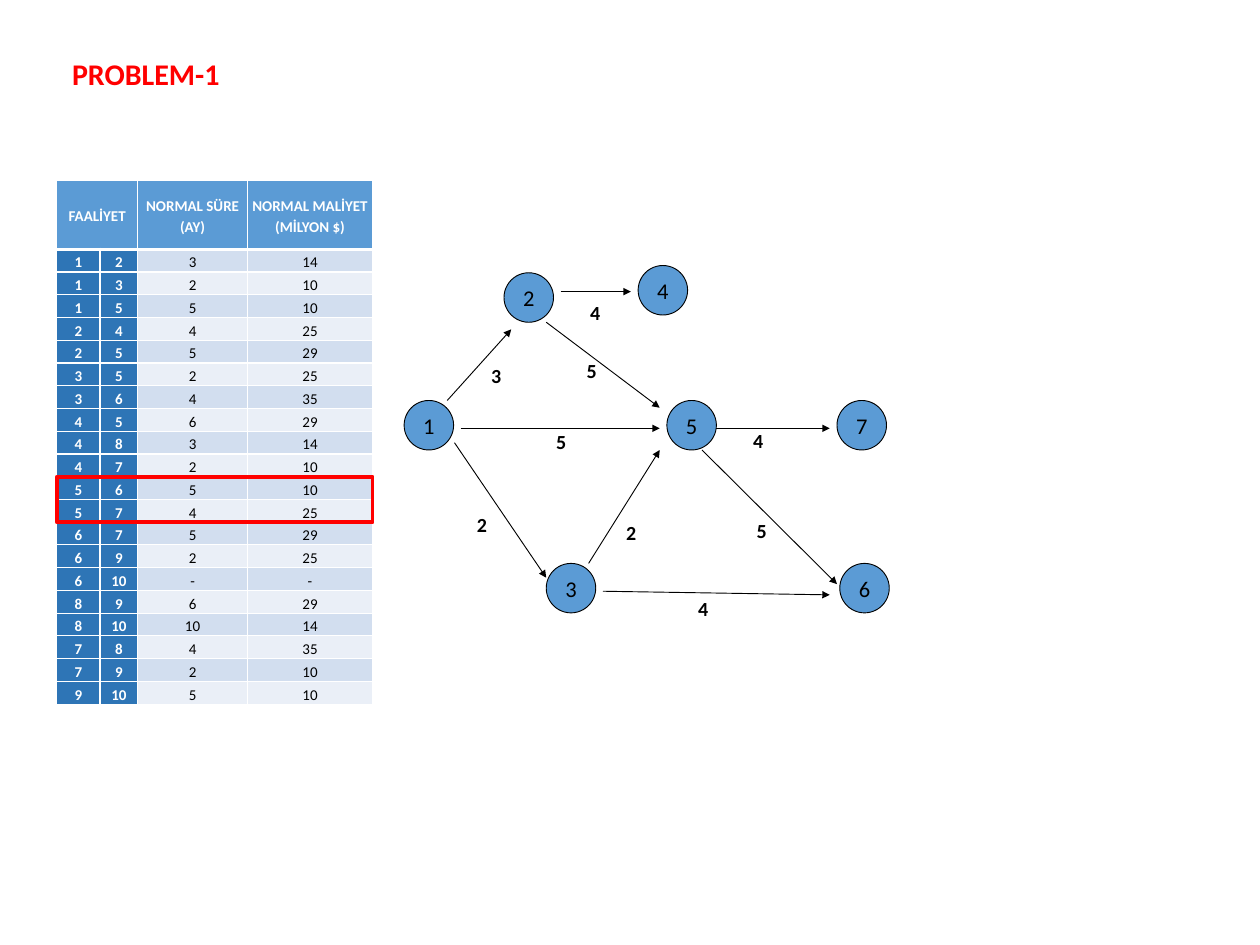
from lxml.etree import SubElement
from pptx import Presentation
from pptx.dml.color import RGBColor
from pptx.enum.shapes import MSO_CONNECTOR, MSO_SHAPE
from pptx.enum.text import MSO_ANCHOR, MSO_AUTO_SIZE, PP_ALIGN
from pptx.oxml.ns import qn
from pptx.util import Pt

RED, BLACK, WHITE = "FF0000", "000000", "FFFFFF"
BLUE, DARK_BLUE, BANDS = "5B9BD5", "2E75B6", ("EAEFF7", "D2DEEF")

HEADERS = {0: ["FAALİYET"], 2: ["NORMAL SÜRE (AY)"], 3: ["NORMAL MALİYET", "(MİLYON $)"]}
ACTIVITIES = [
    (1, 2, 3, 14), (1, 3, 2, 10), (1, 5, 5, 10), (2, 4, 4, 25), (2, 5, 5, 29),
    (3, 5, 2, 25), (3, 6, 4, 35), (4, 5, 6, 29), (4, 8, 3, 14), (4, 7, 2, 10),
    (5, 6, 5, 10), (5, 7, 4, 25), (6, 7, 5, 29), (6, 9, 2, 25), (6, 10, "-", "-"),
    (8, 9, 6, 29), (8, 10, 10, 14), (7, 8, 4, 35), (7, 9, 2, 10), (9, 10, 5, 10),
]
DURATIONS = {(start, end): months for start, end, months, cost in ACTIVITIES}
COLUMN_WIDTHS = (34.6, 30.2, 87.8, 100.1)
HEADER_HEIGHT, ROW_HEIGHT = 54.7, 18.2

NODE_SIZE = 39.6
NODES = {
    1: (3.3, 120.4), 2: (83.2, 18.2), 3: (117, 250.7), 4: (190.5, 12.4),
    5: (213.5, 120.4), 6: (351.8, 250.7), 7: (349.6, 120.4),
}
EDGES = {
    (1, 2): ((37.8, 120.4), (89, 63.5), (65.9, 57.8)),
    (1, 3): ((43.6, 154.2), (117, 262.2), (54.4, 177.3)),
    (1, 5): ((48.6, 142.7), (207.8, 142.7), (117.8, 111)),
    (2, 4): ((128.6, 33.3), (184.7, 33.3), (145.1, 7.4)),
    (2, 5): ((117, 57.8), (207.8, 126.2), (142.2, 54)),
    (3, 5): ((150.9, 250.7), (207.8, 160), (173.9, 183.8)),
    (3, 6): ((162.4, 273), (343.8, 275.9), (231.5, 244.2)),
    (5, 6): ((241.6, 160), (349.6, 267.3), (278.3, 182.3)),
    (5, 7): ((253.1, 142.7), (343.8, 142.7), (275.4, 110.3)),
}


def rgb(value):
    """Turn a hex string into a colour."""
    return RGBColor.from_string(value)


def add_run(p, text, size, color, bold=False):
    """Append a formatted run to a paragraph."""
    r = p.add_run()
    r.text = str(text)
    r.font.name, r.font.size, r.font.bold = "Calibri", Pt(size), bold
    r.font.color.rgb = rgb(color)


def add_title(slide, left, top, width, height):
    """Place and format the slide title."""
    title = slide.shapes.title
    title.left, title.top, title.width, title.height = map(Pt, (left, top, width, height))
    tf = title.text_frame
    tf.auto_size, tf.vertical_anchor = MSO_AUTO_SIZE.NONE, MSO_ANCHOR.TOP
    p = tf.paragraphs[0]
    p.alignment = PP_ALIGN.JUSTIFY
    add_run(p, "PROBLEM-1", 24, RED, True)


def set_borders(cell, row):
    """Draw white cell borders, heavier below the header."""
    heavy = {0: "lnB", 1: "lnT"}.get(row)
    for side in ("lnL", "lnR", "lnT", "lnB"):
        width = Pt(3 if side == heavy else 1)
        ln = SubElement(cell._tc.get_or_add_tcPr(), qn(f"a:{side}"), w=str(width))
        SubElement(SubElement(ln, qn("a:solidFill")), qn("a:srgbClr"), val=WHITE)


def fill_cell(cell, row, lines, fill, color, bold):
    """Format one table cell and write its lines."""
    set_borders(cell, row)
    cell.fill.solid()
    cell.fill.fore_color.rgb = rgb(fill)
    cell.margin_left = cell.margin_right = Pt(3.5)
    cell.margin_top = cell.margin_bottom = 0
    cell.vertical_anchor = MSO_ANCHOR.BOTTOM if row else MSO_ANCHOR.MIDDLE
    p = cell.text_frame.paragraphs[0]
    p.alignment, p.line_spacing = PP_ALIGN.CENTER, 1.15
    for i, line in enumerate(lines):
        if i:
            p.add_line_break()
        add_run(p, line, 12, color, bold)


def add_activity_table(slide, left, top):
    """Build the activity table and frame the activities leaving node 5."""
    width = sum(COLUMN_WIDTHS)
    height = HEADER_HEIGHT + ROW_HEIGHT * len(ACTIVITIES)
    table = slide.shapes.add_table(len(ACTIVITIES) + 1, len(COLUMN_WIDTHS),
                                   Pt(left), Pt(top), Pt(width), Pt(height)).table
    for column, column_width in zip(table.columns, COLUMN_WIDTHS):
        column.width = Pt(column_width)
    for i, row in enumerate(table.rows):
        row.height = Pt(ROW_HEIGHT if i else HEADER_HEIGHT)
    table.cell(0, 0).merge(table.cell(0, 1))
    for column, lines in HEADERS.items():
        fill_cell(table.cell(0, column), 0, lines, BLUE, WHITE, True)
    for row, activity in enumerate(ACTIVITIES, 1):
        for column, value in enumerate(activity):
            style = (DARK_BLUE, WHITE, True) if column < 2 else (BANDS[row % 2], BLACK, False)
            fill_cell(table.cell(row, column), row, [value], *style)

    framed = [i for i, activity in enumerate(ACTIVITIES) if activity[0] == 5]
    frame = slide.shapes.add_shape(
        MSO_SHAPE.RECTANGLE, Pt(left), Pt(top + HEADER_HEIGHT + framed[0] * ROW_HEIGHT),
        Pt(width), Pt(len(framed) * ROW_HEIGHT))
    frame.shadow.inherit = False
    frame.fill.background()
    frame.line.color.rgb, frame.line.width = rgb(RED), Pt(3)


def add_node(slide, left, top, number):
    """Draw a numbered network node."""
    sp = slide.shapes.add_shape(MSO_SHAPE.OVAL, Pt(left), Pt(top), Pt(NODE_SIZE), Pt(NODE_SIZE))
    sp.shadow.inherit = False
    sp.fill.solid()
    sp.fill.fore_color.rgb = rgb(BLUE)
    sp.line.color.rgb, sp.line.width = rgb(BLACK), Pt(0.75)
    tf = sp.text_frame
    tf.word_wrap, tf.vertical_anchor = False, MSO_ANCHOR.MIDDLE
    p = tf.paragraphs[0]
    p.alignment = PP_ALIGN.CENTER
    add_run(p, number, 18, BLACK)


def add_arrow(slide, x1, y1, x2, y2):
    """Draw a thin black arrow."""
    line = slide.shapes.add_connector(MSO_CONNECTOR.STRAIGHT, *map(Pt, (x1, y1, x2, y2)))
    line.line.color.rgb, line.line.width = rgb(BLACK), Pt(0.75)
    SubElement(line.line._get_or_add_ln(), qn("a:tailEnd"), type="triangle")
    SubElement(line._element.spPr, qn("a:effectLst"))


def add_duration(slide, left, top, months):
    """Write the duration beside an arrow."""
    tf = slide.shapes.add_textbox(Pt(left), Pt(top), Pt(22.3), Pt(55.4)).text_frame
    tf.word_wrap, tf.vertical_anchor = True, MSO_ANCHOR.BOTTOM
    add_run(tf.paragraphs[0], months, 16, BLACK, True)


def add_network(slide, left, top):
    """Draw the activity network from its top left corner."""
    for number, (x, y) in NODES.items():
        add_node(slide, left + x, top + y, number)
    for activity, ((x1, y1), (x2, y2), (x, y)) in EDGES.items():
        add_arrow(slide, left + x1, top + y1, left + x2, top + y2)
        add_duration(slide, left + x, top + y, DURATIONS[activity])


def main():
    """Build the slide and save it."""
    prs = Presentation()
    prs.slide_width, prs.slide_height = Pt(1008), Pt(756)
    s = prs.slides.add_slide(prs.slide_layouts[5])
    add_title(s, 50.4, 41, 928.8, 36)
    add_activity_table(s, 45.4, 144.7)
    add_network(s, 320, 200)
    prs.save("out.pptx")


if __name__ == "__main__":
    main()
